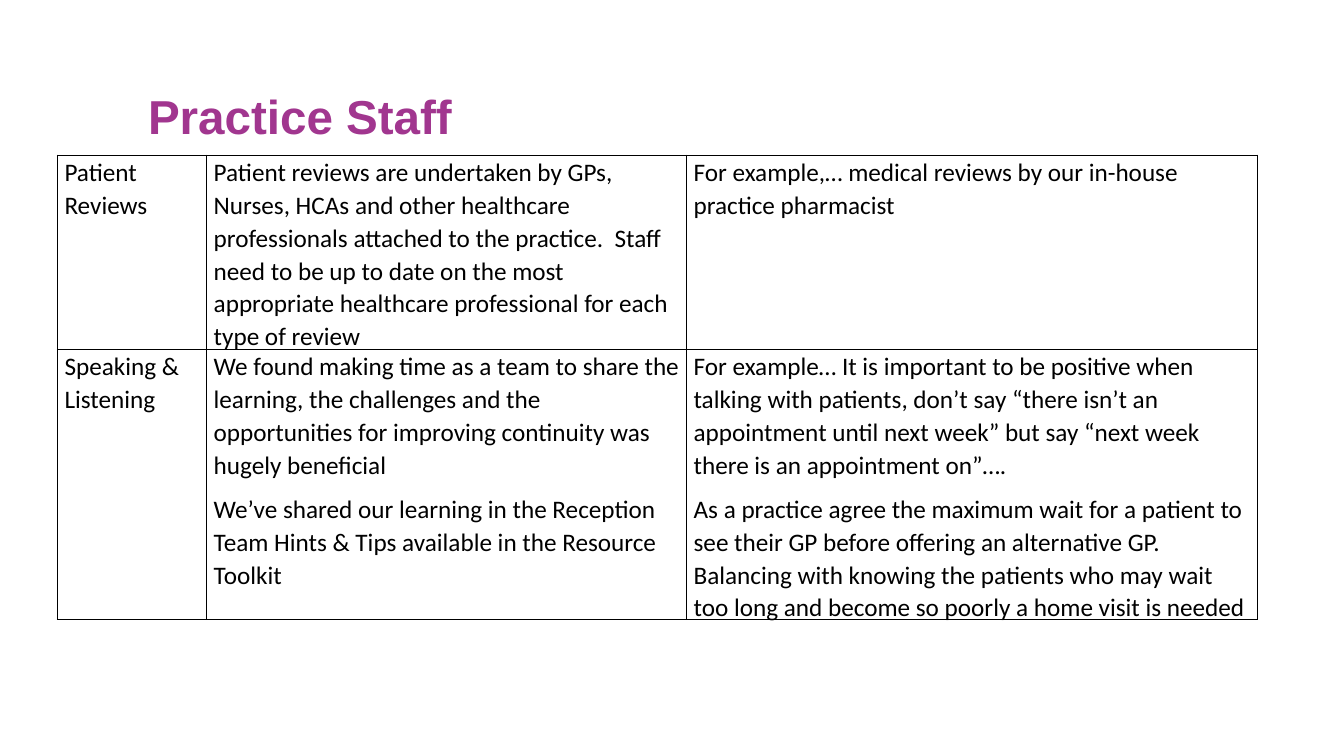
from lxml.etree import SubElement
from pptx import Presentation
from pptx.dml.color import RGBColor
from pptx.enum.text import MSO_ANCHOR
from pptx.oxml.ns import qn
from pptx.util import Inches, Pt

COLORS = {"title": "A1368F", "text": "000000", "border": "000000"}
TITLE = "Practice Staff"
# Each row holds cells, each cell a list of paragraphs
ROWS = [
    [
        ["Patient Reviews"],
        ["Patient reviews are undertaken by GPs, Nurses, HCAs and other healthcare "
         "professionals attached to the practice.  Staff need to be up to date on the "
         "most appropriate healthcare professional for each type of review"],
        ["For example,… medical reviews by our in-house practice pharmacist"],
    ],
    [
        ["Speaking & Listening"],
        ["We found making time as a team to share the learning, the challenges and the "
         "opportunities for improving continuity was hugely beneficial",
         "We’ve shared our learning in the Reception Team Hints & Tips available in the "
         "Resource Toolkit"],
        ["For example… It is important to be positive when talking with patients, don’t "
         "say “there isn’t an appointment until next week” but say “next week there is "
         "an appointment on”….",
         "As a practice agree the maximum wait for a patient to see their GP before "
         "offering an alternative GP. Balancing with knowing the patients who may wait "
         "too long and become so poorly a home visit is needed"],
    ],
]
TITLE_BOX = (1.37, 0.46, 11.84, 1.45)
TABLE_LEFT, TABLE_TOP = 0.57, 1.54
COL_WIDTHS = (1.48, 4.76, 5.66)
ROW_HEIGHTS = (1.9, 2.68)


def style_paragraph(p, font, size, color, spacing, bold=False):
    p.line_spacing = spacing
    for r in p.runs:
        r.font.name, r.font.size, r.font.bold = font, Pt(size), bold
        r.font.color.rgb = RGBColor.from_string(COLORS[color])


def add_borders(cell):
    tcPr = cell._tc.get_or_add_tcPr()
    for side in ("a:lnL", "a:lnR", "a:lnT", "a:lnB"):
        ln = SubElement(tcPr, qn(side), w=str(Pt(1)))
        fill = SubElement(ln, qn("a:solidFill"))
        SubElement(fill, qn("a:srgbClr"), val=COLORS["border"])


def fill_cell(cell, paragraphs):
    cell.margin_left = cell.margin_right = Inches(0.07)
    cell.margin_top = cell.margin_bottom = 0
    tf = cell.text_frame
    tf.text = "\n".join(paragraphs)
    for p in tf.paragraphs:
        p.space_after = Pt(8)
        style_paragraph(p, "Calibri", 18, "text", 1.07)
    add_borders(cell)
    cell.fill.background()


def add_title(s):
    tf = s.shapes.add_textbox(*map(Inches, TITLE_BOX)).text_frame
    tf.word_wrap = True
    tf.vertical_anchor = MSO_ANCHOR.MIDDLE
    tf.text = TITLE
    style_paragraph(tf.paragraphs[0], "Arial", 34, "title", 0.9, bold=True)


def add_staff_table(s):
    size = sum(COL_WIDTHS), sum(ROW_HEIGHTS)
    table = s.shapes.add_table(len(ROWS), len(COL_WIDTHS),
                               *map(Inches, (TABLE_LEFT, TABLE_TOP, *size))).table
    table.first_row = table.horz_banding = False
    for column, width in zip(table.columns, COL_WIDTHS):
        column.width = Inches(width)
    for row, height, contents in zip(table.rows, ROW_HEIGHTS, ROWS):
        row.height = Inches(height)
        for cell, paragraphs in zip(row.cells, contents):
            fill_cell(cell, paragraphs)


def main():
    prs = Presentation()
    prs.slide_width, prs.slide_height = Inches(13.33), Inches(7.5)
    s = prs.slides.add_slide(prs.slide_layouts[6])
    add_title(s)
    add_staff_table(s)
    prs.save("out.pptx")


if __name__ == "__main__":
    main()
